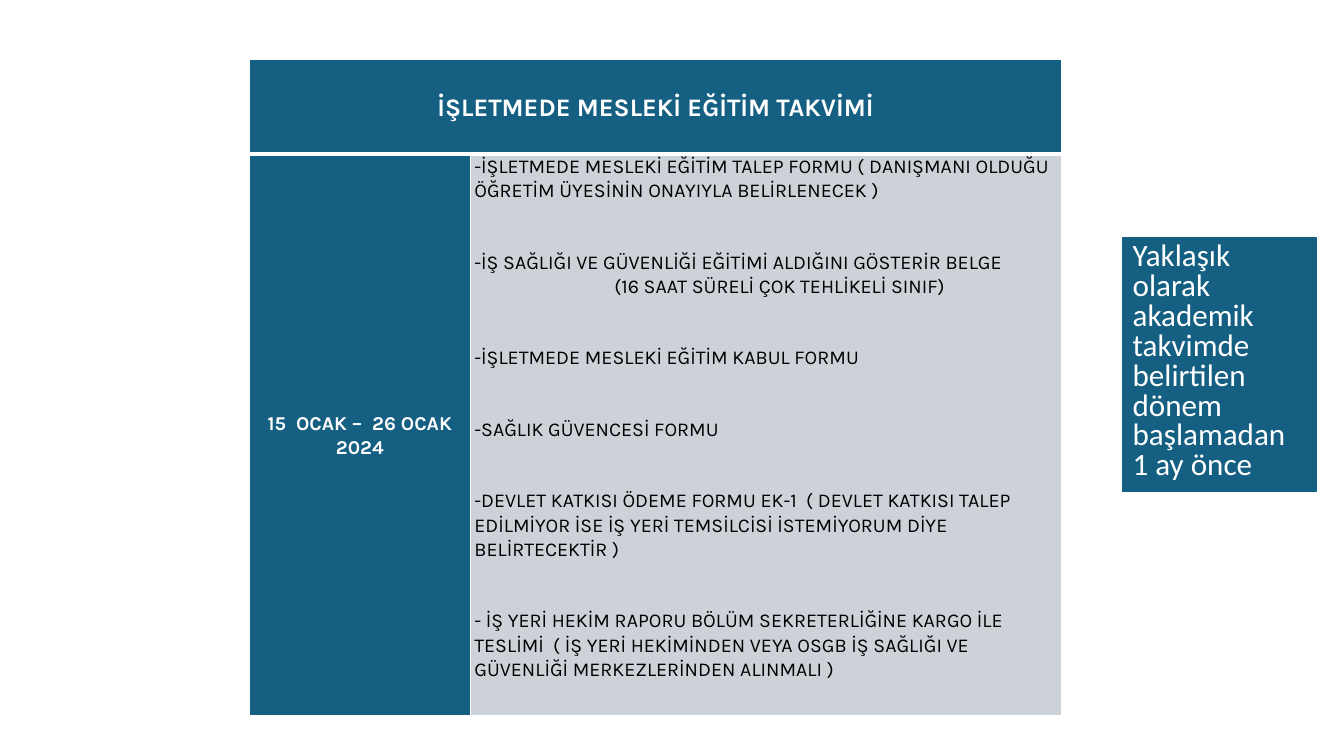
from lxml.etree import SubElement
from pptx import Presentation
from pptx.dml.color import RGBColor
from pptx.enum.shapes import MSO_SHAPE as Shape
from pptx.enum.text import MSO_ANCHOR as Anchor, PP_ALIGN as Align
from pptx.oxml.ns import qn
from pptx.util import Pt

BLUE = RGBColor(0x15, 0x60, 0x82)
GREY = RGBColor(0xCC, 0xD2, 0xD8)
WHITE = RGBColor(0xFF, 0xFF, 0xFF)
BLACK = RGBColor(0, 0, 0)

HEADING = "İŞLETMEDE MESLEKİ EĞİTİM TAKVİMİ"
DATES = "15  OCAK –  26 OCAK 2024"
STEP_GAP, END_GAP, NOTE_INDENT = 33.5, 8, 100
STEPS = [
    ("-İŞLETMEDE MESLEKİ EĞİTİM TALEP FORMU ( DANIŞMANI OLDUĞU ÖĞRETİM ÜYESİNİN "
     "ONAYIYLA BELİRLENECEK )", 0, STEP_GAP),
    ("-İŞ SAĞLIĞI VE GÜVENLİĞİ EĞİTİMİ ALDIĞINI GÖSTERİR BELGE", 0, 0),
    ("(16 SAAT SÜRELİ ÇOK TEHLİKELİ SINIF)", NOTE_INDENT, STEP_GAP),
    ("-İŞLETMEDE MESLEKİ EĞİTİM KABUL FORMU", 0, STEP_GAP),
    ("-SAĞLIK GÜVENCESİ FORMU", 0, STEP_GAP),
    ("-DEVLET KATKISI ÖDEME FORMU EK-1  ( DEVLET KATKISI TALEP EDİLMİYOR İSE İŞ YERİ "
     "TEMSİLCİSİ İSTEMİYORUM DİYE BELİRTECEKTİR )", 0, STEP_GAP),
    ("- İŞ YERİ HEKİM RAPORU BÖLÜM SEKRETERLİĞİNE KARGO İLE TESLİMİ  ( İŞ YERİ "
     "HEKİMİNDEN VEYA OSGB İŞ SAĞLIĞI VE GÜVENLİĞİ MERKEZLERİNDEN ALINMALI )", 0, END_GAP),
]
REMINDER = "Yaklaşık olarak akademik takvimde belirtilen dönem başlamadan 1 ay önce"


def style_cell(cell, color, anchor, top, bottom):
    """Give a cell its white borders, fill, margins and anchor."""
    properties = cell._tc.get_or_add_tcPr()
    for side, width in (("L", 1), ("R", 1), ("T", top), ("B", bottom)):
        border = SubElement(properties, qn(f"a:ln{side}"), w=str(Pt(width)))
        paint = SubElement(border, qn("a:solidFill"))
        SubElement(paint, qn("a:srgbClr"), val=str(WHITE))
    cell.fill.solid()
    cell.fill.fore_color.rgb = color
    cell.margin_left = cell.margin_right = Pt(2.7)
    cell.margin_top = cell.margin_bottom = 0
    cell.vertical_anchor = anchor


def style_paragraph(paragraph, size, color, bold=False, after=END_GAP):
    """Set the font and spacing of a calendar paragraph."""
    paragraph.line_spacing = 1.07
    paragraph.space_after = Pt(after)
    font = paragraph.font
    font.name, font.size, font.bold = "Karla", Pt(size), bold
    font.color.rgb = color


def add_calendar(slide, left, top, width, height):
    """Place the calendar table: heading, dates and required steps."""
    heading_height, dates_width = 67.4, 158.2
    calendar = slide.shapes.add_table(
        2, 2, Pt(left), Pt(top), Pt(width), Pt(height)).table
    calendar.columns[0].width = Pt(dates_width)
    calendar.columns[1].width = Pt(width - dates_width)
    calendar.rows[0].height = Pt(heading_height)
    calendar.rows[1].height = Pt(height - heading_height)

    heading, heading_rest = calendar.cell(0, 0), calendar.cell(0, 1)
    dates, steps = calendar.cell(1, 0), calendar.cell(1, 1)
    heading.merge(heading_rest)
    for cell in (heading, heading_rest):
        style_cell(cell, BLUE, Anchor.MIDDLE, 1, 3)
    style_cell(dates, BLUE, Anchor.MIDDLE, 3, 1)
    style_cell(steps, GREY, Anchor.TOP, 3, 1)

    for cell, text, size in ((heading, HEADING, 18), (dates, DATES, 14)):
        cell.text = text
        paragraph = cell.text_frame.paragraphs[0]
        paragraph.alignment = Align.CENTER
        style_paragraph(paragraph, size, WHITE, bold=True)

    steps.text = "\n".join(text for text, _, _ in STEPS)
    for paragraph, (_, indent, after) in zip(steps.text_frame.paragraphs, STEPS):
        style_paragraph(paragraph, 14, BLACK, after=after)
        if indent:
            paragraph._p.get_or_add_pPr().set("marL", str(Pt(indent)))


def add_reminder(slide, left, top, width, height):
    """Place the blue reminder box beside the calendar."""
    reminder = slide.shapes.add_shape(
        Shape.RECTANGLE, Pt(left), Pt(top), Pt(width), Pt(height))
    reminder.shadow.inherit = False
    reminder.fill.solid()
    reminder.fill.fore_color.rgb = BLUE
    reminder.line.color.rgb = BLUE
    reminder.line.width = Pt(0.75)
    frame = reminder.text_frame
    frame.text = REMINDER
    frame.word_wrap = True
    frame.vertical_anchor = Anchor.TOP
    paragraph = frame.paragraphs[0]
    paragraph.alignment = Align.LEFT
    paragraph.line_spacing = 0.8
    paragraph.space_before = Pt(10)
    paragraph.font.name = "Calibri"
    paragraph.font.size = Pt(22.2)
    paragraph.font.color.rgb = WHITE


def main():
    """Build and save the training calendar slide."""
    deck = Presentation()
    deck.slide_width, deck.slide_height = Pt(960), Pt(540)
    slide = deck.slides.add_slide(deck.slide_layouts[6])
    add_calendar(slide, 178, 42.5, 580.6, 469)
    add_reminder(slide, 802, 170, 138.4, 181.4)
    deck.save("out.pptx")


if __name__ == "__main__":
    main()
